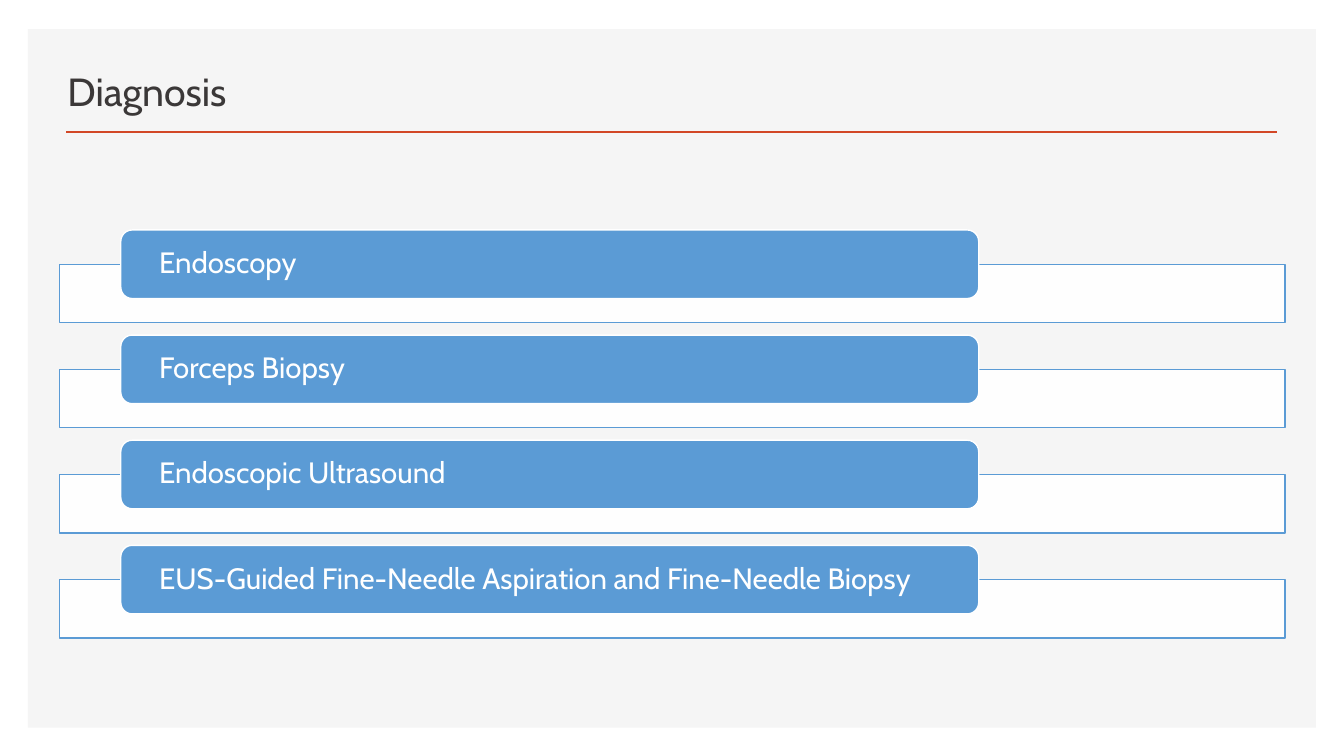
from dataclasses import dataclass

from lxml import etree
from pptx import Presentation
from pptx.dml.color import RGBColor
from pptx.enum import shapes, text
from pptx.oxml import ns
from pptx.util import Pt


@dataclass(frozen=True)
class Theme:
    font: str = "Cabin"
    title_size: float = 28
    step_size: float = 21
    panel: RGBColor = RGBColor(0xF5, 0xF5, 0xF5)
    rule: RGBColor = RGBColor(0xD2, 0x47, 0x26)
    title: RGBColor = RGBColor(0x3B, 0x38, 0x38)
    accent: RGBColor = RGBColor(0x5B, 0x9B, 0xD5)
    white: RGBColor = RGBColor(0xFF, 0xFF, 0xFF)


THEME = Theme()
STEPS = [
    "Endoscopy",
    "Forceps Biopsy",
    "Endoscopic Ultrasound",
    "EUS-Guided Fine-Needle Aspiration and Fine-Needle Biopsy",
]


def set_all(target, values):
    for name, value in values.items():
        setattr(target, name, value)


def write(frame, words, size, color, anchor, **margins):
    """Put one left-aligned paragraph into a text frame."""
    set_all(frame, {"text": words, "word_wrap": True, "vertical_anchor": anchor,
                    "auto_size": text.MSO_AUTO_SIZE.NONE, **margins})
    paragraph = frame.paragraphs[0]
    set_all(paragraph, {"alignment": text.PP_ALIGN.LEFT, "line_spacing": 0.9})
    font = paragraph.runs[0].font
    set_all(font, {"name": THEME.font, "size": Pt(size)})
    font.color.rgb = color


def add_block(parent, kind, box, fill, line=None):
    """Add a flat filled shape; without a line colour it has no outline."""
    block = parent.shapes.add_shape(kind, *map(Pt, box))
    block.shadow.inherit = False
    block.fill.solid()
    block.fill.fore_color.rgb = fill
    if line is None:
        block.line.fill.background()
    else:
        block.line.color.rgb = line
        block.line.width = Pt(1)
    return block


def set_opacity(block, percent):
    color = block.fill._xPr.find(ns.qn("a:solidFill"))[0]
    etree.SubElement(color, ns.qn("a:alpha")).set("val", str(percent * 1000))


def add_panel(slide, left, top, width, height):
    """Draw the grey panel, its red rule and the title on top."""
    panel = add_block(slide, shapes.MSO_SHAPE.RECTANGLE,
                      (left, top, width, height), THEME.panel)
    rule_y = top + 73.5
    rule = slide.shapes.add_connector(
        shapes.MSO_CONNECTOR.STRAIGHT, Pt(left + 27.5), Pt(rule_y),
        Pt(left + width - 28), Pt(rule_y))
    rule.line.color.rgb = THEME.rule
    rule.line.width = Pt(2)
    etree.SubElement(rule._element.spPr, ns.qn("a:effectLst"))

    title = slide.shapes.title
    set_all(title, {"left": Pt(left + 21), "top": Pt(top + 14.5),
                    "width": Pt(541.5), "height": Pt(50.5)})
    write(title.text_frame, "Diagnosis", THEME.title_size, THEME.title,
          text.MSO_ANCHOR.BOTTOM)
    panel._element.addnext(title._element)


def add_steps(slide, left, top, width, height):
    """Stack one labelled bar over a wide frame for each step."""
    frame_height, bar_height, overlap = 41.75, 49, 24.5
    pitch = (height - overlap - frame_height) / (len(STEPS) - 1)
    group = slide.shapes.add_group_shape()
    for index, step in enumerate(STEPS):
        bar_top = top + index * pitch
        frame = add_block(group, shapes.MSO_SHAPE.RECTANGLE,
                          (left, bar_top + overlap, width, frame_height),
                          THEME.white, THEME.accent)
        set_opacity(frame, 90)
        bar = add_block(group, shapes.MSO_SHAPE.ROUNDED_RECTANGLE,
                        (left + width * 0.05, bar_top, width * 0.7, bar_height),
                        THEME.accent, THEME.white)
        write(bar.text_frame, step, THEME.step_size, THEME.white,
              text.MSO_ANCHOR.MIDDLE, margin_left=Pt(25), margin_right=Pt(25),
              margin_top=0, margin_bottom=0)


def main():
    deck = Presentation()
    set_all(deck, {"slide_width": Pt(960), "slide_height": Pt(540)})
    slide = deck.slides.add_slide(deck.slide_layouts.get_by_name("Title Only"))
    add_panel(slide, 20, 20.75, 920, 499)
    add_steps(slide, 42.5, 164.25, 875.5, 291.5)
    deck.save("out.pptx")


if __name__ == "__main__":
    main()
